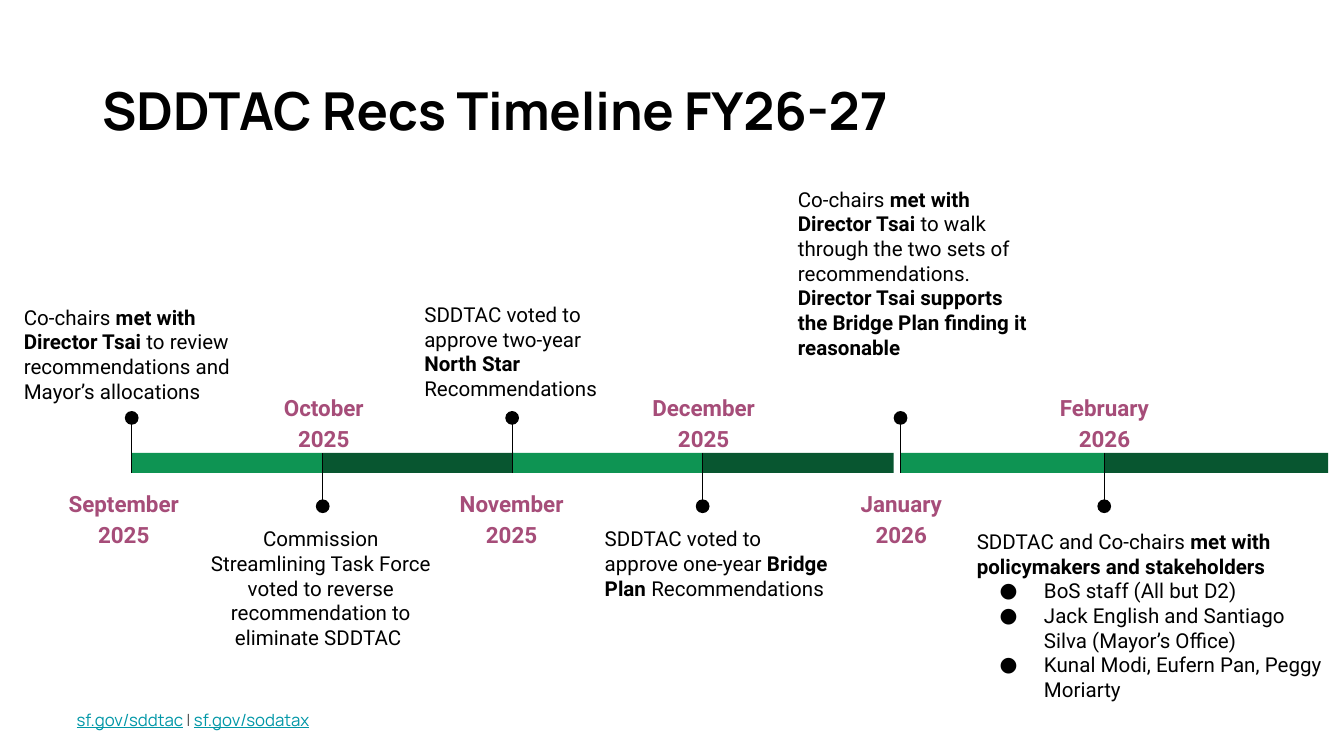
from dataclasses import dataclass
from lxml.etree import SubElement
from pptx import Presentation
from pptx.dml.color import RGBColor
from pptx.enum.shapes import MSO_CONNECTOR, MSO_SHAPE
from pptx.enum.text import MSO_ANCHOR, MSO_AUTO_SIZE, PP_ALIGN
from pptx.oxml.ns import qn
from pptx.util import Cm, Pt


@dataclass(frozen=True)
class Theme:
    black: str = "000000"
    grey: str = "595959"
    teal: str = "0097A7"
    plum: str = "A64D79"
    light: str = "0E9453"
    dark: str = "085630"
    head: str = "Manrope"
    body: str = "Roboto"
    title: int = 28
    month: int = 12
    note: int = 11
    foot: int = 9


class Deck:
    def __init__(self, theme):
        self.theme = theme
        self.file = Presentation()
        self.file.slide_width = Cm(25.4)
        self.file.slide_height = Cm(14.29)
        self.slide = self.file.slides.add_slide(self.file.slide_layouts[1])
        self.shapes = self.slide.shapes

    def place(self, shape, box):
        shape.left, shape.top, shape.width, shape.height = map(Cm, box)

    def frame(self, shape, pad, side=None):
        text = shape.text_frame
        text.word_wrap = True
        text.auto_size = MSO_AUTO_SIZE.NONE
        text.vertical_anchor = MSO_ANCHOR.TOP
        text.margin_top = text.margin_bottom = Cm(pad)
        text.margin_left = text.margin_right = Cm(side or pad)
        return text

    def box(self, box, pad=0.25):
        return self.frame(self.shapes.add_textbox(*map(Cm, box)), pad)

    def run(self, para, text, size, color, face, bold=False, line=False):
        run = para.add_run()
        run.text = text
        font = run.font
        font.name, font.size, font.bold = face, Pt(size), bold
        font.underline = line
        font.color.rgb = RGBColor.from_string(color)

    def mixed(self, para, text):
        for i, part in enumerate(text.split("|")):
            if part:
                self.run(para, part, self.theme.note, self.theme.black,
                         self.theme.body, bold=i % 2 == 1)

    def title(self, text, box):
        shape = self.shapes.title
        self.place(shape, box)
        frame = self.frame(shape, 0.1, 0.18)
        frame.vertical_anchor = MSO_ANCHOR.MIDDLE
        para = frame.paragraphs[0]
        para.alignment = PP_ALIGN.LEFT
        para.line_spacing = 0.9
        self.run(para, text, self.theme.title, self.theme.black,
                 self.theme.head, bold=True)

    def month(self, text, box):
        para = self.box(box).paragraphs[0]
        para.alignment = PP_ALIGN.CENTER
        para.line_spacing = 1.15
        self.run(para, text, self.theme.month, self.theme.plum,
                 self.theme.body, bold=True)

    def note(self, text, box, align):
        para = self.box(box).paragraphs[0]
        para.alignment = align
        self.mixed(para, text)

    def list(self, lead, items, box):
        shape = self.slide.placeholders[1]
        self.place(shape, box)
        frame = self.frame(shape, 0.25)
        for i, text in enumerate([lead, *items]):
            para = frame.add_paragraph() if i else frame.paragraphs[0]
            para.space_before = para.space_after = Pt(0)
            self.mixed(para, text)
            self.bullet(para, "●" if i else None)

    def bullet(self, para, mark):
        props = para._p.get_or_add_pPr()
        props.set("marL", str(Cm(1.27) if mark else 0))
        props.set("indent", str(Cm(-0.84) if mark else 0))
        if not mark:
            SubElement(props, qn("a:buNone"))
            return
        color = SubElement(props, qn("a:buClr"))
        SubElement(color, qn("a:srgbClr"), val=self.theme.black)
        SubElement(props, qn("a:buFont"), typeface=self.theme.body)
        SubElement(props, qn("a:buChar"), char=mark)

    def solid(self, kind, box, color):
        shape = self.shapes.add_shape(kind, *map(Cm, box))
        shape.shadow.inherit = False
        shape.fill.solid()
        shape.fill.fore_color.rgb = RGBColor.from_string(color)
        shape.line.fill.background()

    def pin(self, x, start, end):
        size = 0.26
        line = self.shapes.add_connector(
            MSO_CONNECTOR.STRAIGHT, Cm(x), Cm(start), Cm(x), Cm(end))
        line.line.width = Pt(0.75)
        line.line.color.rgb = RGBColor.from_string(self.theme.black)
        SubElement(line._element.spPr, qn("a:effectLst"))
        self.solid(MSO_SHAPE.OVAL, (x - size / 2, start - size / 2, size, size),
                   self.theme.black)

    def foot(self, links, box):
        theme = self.theme
        para = self.box(box, 0.18).paragraphs[0]
        for i, link in enumerate(links):
            if i:
                self.run(para, " | ", theme.foot, theme.grey, theme.head)
            self.run(para, link, theme.foot, theme.teal, theme.head, line=True)


def main():
    theme = Theme()
    deck = Deck(theme)
    left, mid = PP_ALIGN.LEFT, PP_ALIGN.CENTER
    deck.foot(["sf.gov/sddtac", "sf.gov/sodatax"], (1.27, 13.23, 9.42, 0.76))
    deck.title("SDDTAC Recs Timeline FY26-27", (1.75, 0.76, 21.9, 2.77))

    top, tall = 8.56, 0.38
    base = top + tall
    steps = [
        ("September 2025", 2.49, 3.61, (0.97, 2.74)),
        ("October 2025", 6.1, 3.61, (5.08, 2.08)),
        ("November 2025", 9.68, 3.61, (8.36, 2.62)),
        ("December 2025", 13.28, 3.61, (11.84, 2.92)),
        ("January 2026", 17.02, 3.85, (15.93, 2.21)),
        ("February 2026", 20.87, 4.23, (19.58, 2.59)),
    ]
    for i, (month, x, wide, (start, span)) in enumerate(steps):
        down = i % 2 == 1
        deck.solid(MSO_SHAPE.RECTANGLE, (x, top, wide, tall),
                   theme.dark if down else theme.light)
        deck.month(month, (start, 7.12 if down else base, span, 1.04))
        if down:
            deck.pin(x, 9.57, top)
        else:
            deck.pin(x, 7.9, base)

    notes = [
        ("Co-chairs| met with Director Tsai |to review recommendations and "
         "Mayor’s allocations", (0.2, 5.51, 4.93, 1.9), left),
        ("Commission Streamlining Task Force voted to reverse recommendation "
         "to eliminate SDDTAC ", (3.73, 9.7, 4.67, 3.28), mid),
        ("SDDTAC voted to approve two-year |North Star| Recommendations",
         (7.77, 5.46, 4.34, 2.54), left),
        ("SDDTAC voted to approve one-year |Bridge Plan |Recommendations",
         (11.18, 9.7, 4.93, 1.68), left),
        ("Co-chairs |met with Director Tsai |to walk through the two sets of "
         "recommendations. |Director Tsai supports the Bridge Plan finding it "
         "reasonable", (14.83, 3.28, 4.98, 2.62), left),
    ]
    for text, box, align in notes:
        deck.note(text, box, align)

    deck.list(
        "SDDTAC and Co-chairs |met with policymakers and stakeholders",
        ["BoS staff (All but D2)",
         "Jack English and Santiago Silva (Mayor’s Office)",
         "Kunal Modi, Eufern Pan, Peggy Moriarty"],
        (18.21, 9.75, 7.14, 2.62))
    deck.file.save("out.pptx")


if __name__ == "__main__":
    main()
